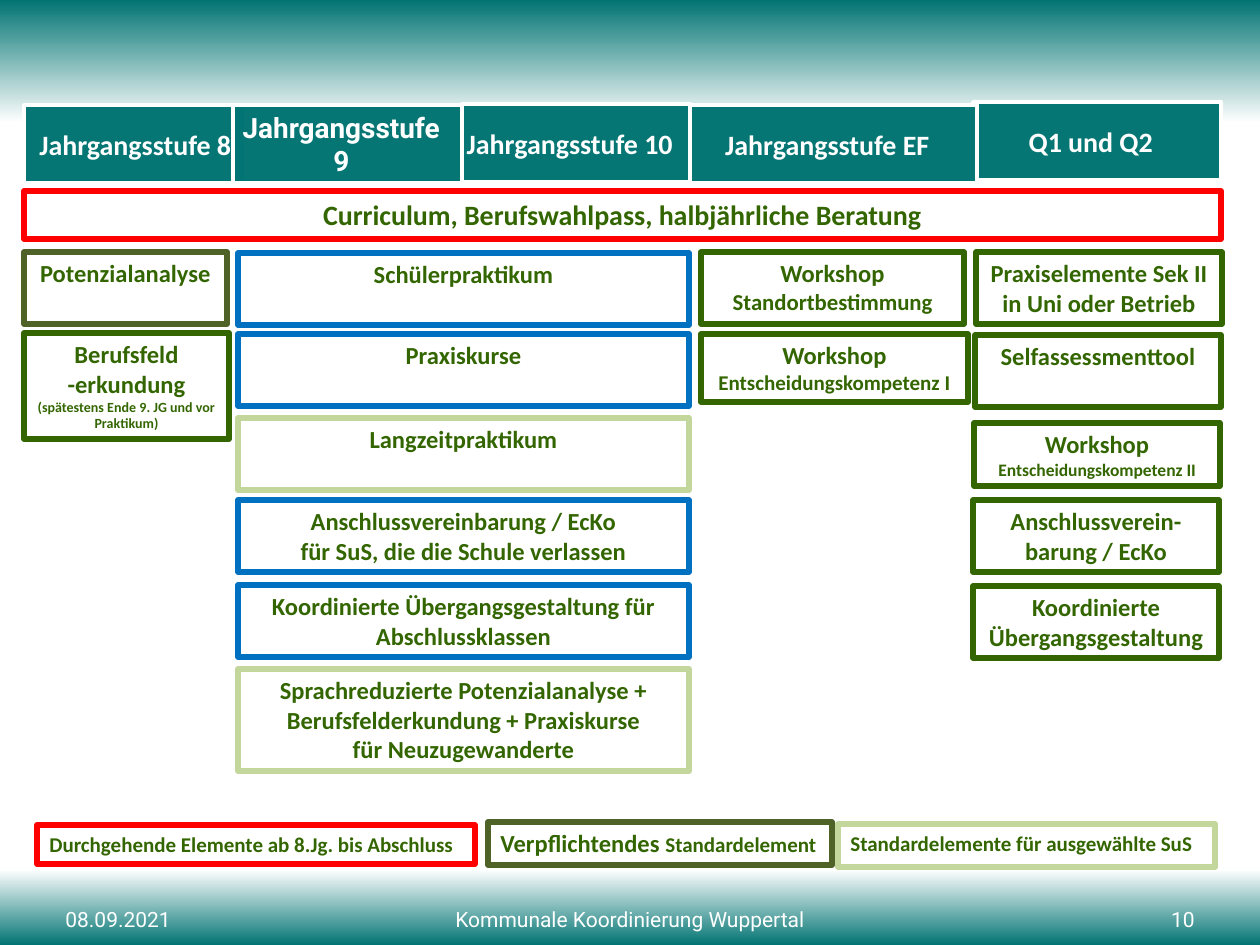
import pptx
import pptx.util
import pptx.dml.color
import pptx.enum.shapes
import pptx.enum.text
import pptx.oxml.ns
import lxml.etree

SCALE = 914400 / 126
TEAL, WHITE, GREEN = "027473", "FFFFFF", "336600"
OLIVE, BLUE, LIME, RED = "4F6228", "0070C0", "C3D69B", "FF0000"
ALIGN = pptx.enum.text.PP_ALIGN
MIDDLE = pptx.enum.text.MSO_ANCHOR.MIDDLE


def emu(px):
    return pptx.util.Emu(round(px * SCALE))


def color(text):
    return pptx.dml.color.RGBColor.from_string(text)


def child(node, tag, **attrs):
    return lxml.etree.SubElement(node, pptx.oxml.ns.qn(tag), attrs)


class Board:
    def __init__(self, slide):
        self.slide = slide
        self.font = "Calibri"
        self.ink = GREEN
        self.size = 14

    def back(self, stops):
        fill = self.slide.background.fill
        fill.gradient()
        fill.gradient_angle = 270
        root = self.slide.element
        steps = next(root.iter(pptx.oxml.ns.qn("a:gsLst")))
        for old in list(steps):
            steps.remove(old)
        for place, tone in stops:
            stop = child(steps, "a:gs", pos=str(place * 1000))
            child(stop, "a:srgbClr", val=tone)

    def label(self, frame, paras, align, ink, font, bold=True):
        frame.word_wrap = True
        for i, runs in enumerate(paras):
            para = frame.paragraphs[0] if i == 0 else frame.add_paragraph()
            para.alignment = align
            para.font.name = font
            para.font.bold = bold
            para.font.color.rgb = color(ink)
            if isinstance(runs, str):
                runs = [(runs, self.size)]
            if len(runs) == 1:
                para.font.size = pptx.util.Pt(runs[0][1])
            for text, size in runs:
                run = para.add_run()
                run.text = text
                if len(runs) > 1:
                    run.font.size = pptx.util.Pt(size)

    def rect(self, x, y, w, h, line, width):
        kind = pptx.enum.shapes.MSO_SHAPE.RECTANGLE
        shape = self.slide.shapes.add_shape(kind, emu(x), emu(y), emu(w), emu(h))
        shape.shadow.inherit = False
        shape.line.color.rgb = color(line)
        shape.line.width = pptx.util.Pt(width)
        return shape

    def head(self, x, y, w, text, font="Calibri", left=0):
        shape = self.rect(x, y, w, 78, WHITE, 2)
        shape.fill.solid()
        shape.fill.fore_color.rgb = color(TEAL)
        tone = shape.element.spPr.find(".//" + pptx.oxml.ns.qn("a:srgbClr"))
        child(tone, "a:alpha", val="98000")
        frame = shape.text_frame
        frame.margin_left = emu(left)
        frame.vertical_anchor = MIDDLE
        self.label(frame, [[(text, 16)]], ALIGN.CENTER, WHITE, font)

    def box(self, x, y, w, h, line, *paras, align=ALIGN.CENTER):
        shape = self.rect(x, y, w, h, line, 3.25)
        shape.fill.background()
        shape.text_frame.vertical_anchor = pptx.enum.text.MSO_ANCHOR.TOP
        self.label(shape.text_frame, paras, align, self.ink, self.font)

    def foot(self, x, w, text, align):
        area = self.slide.shapes.add_textbox(emu(x), emu(900), emu(w), emu(39))
        area.text_frame.vertical_anchor = MIDDLE
        self.label(area.text_frame, [[(text, 12)]], align, WHITE, "Roboto", False)


def main():
    deck = pptx.Presentation()
    deck.slide_width, deck.slide_height = emu(1260), emu(945)
    board = Board(deck.slides.add_slide(deck.slide_layouts[6]))
    board.back([(0, TEAL), (13, WHITE), (52, WHITE), (92, WHITE), (100, TEAL)])

    board.foot(53, 159, "08.09.2021", ALIGN.LEFT)
    board.foot(382, 496, "Kommunale Koordinierung Wuppertal", ALIGN.CENTER)
    board.foot(1048, 159, "10", ALIGN.RIGHT)

    board.head(24, 105, 222, "Jahrgangsstufe 8", left=13)
    board.head(233, 105, 229, "Jahrgangsstufe 9", font="Roboto")
    board.head(462, 104, 228, "Jahrgangsstufe 10")
    board.head(973, 102, 248, "Q1 und Q2")
    board.head(690, 105, 287, "Jahrgangsstufe EF")

    board.box(24, 191, 1197, 48, RED,
              [("Curriculum, Berufswahlpass, halbjährliche Beratung", 16)])

    board.box(24, 252, 203, 72, OLIVE, "Potenzialanalyse")
    board.box(24, 333, 205, 106, GREEN, "Berufsfeld", "-erkundung",
              [("(spätestens Ende 9. JG und vor Praktikum)", 8)])

    middle = [
        (253, 72, BLUE, ["Schülerpraktikum"]),
        (334, 72, BLUE, ["Praxiskurse"]),
        (418, 72, LIME, ["Langzeitpraktikum"]),
        (500, 72, BLUE, ["Anschlussvereinbarung / EcKo",
                         "für SuS, die die Schule verlassen"]),
        (585, 72, BLUE, ["Koordinierte Übergangsgestaltung für Abschlussklassen"]),
        (669, 102, LIME, ["Sprachreduzierte Potenzialanalyse +",
                          "Berufsfelderkundung + Praxiskurse",
                          "für Neuzugewanderte"]),
    ]
    for y, h, line, paras in middle:
        board.box(238, y, 451, h, line, *paras)

    shop = ("Workshop ", 14)
    board.box(701, 252, 263, 72, GREEN, [shop, ("Standortbestimmung", 13)])
    board.box(701, 334, 267, 68, GREEN, [shop, ("Entscheidungskompetenz I", 12)])

    right = [
        (976, 252, 72, "Praxiselemente Sek II in Uni oder Betrieb"),
        (975, 335, 72, "Selfassessmenttool"),
        (974, 423, 63, [shop, ("Entscheidungskompetenz II", 10)]),
        (973, 500, 72, "Anschlussverein-barung / EcKo"),
        (973, 586, 72, "Koordinierte Übergangsgestaltung"),
    ]
    for x, y, h, para in right:
        board.box(x, y, 246, h, GREEN, para)

    legend = [
        (838, 824, 377, 43, LIME, [("Standardelemente für ausgewählte SuS", 12)]),
        (488, 822, 344, 43, OLIVE, [("Verpflichtendes ", 14), ("Standardelement", 12)]),
        (37, 825, 438, 39, RED, [("Durchgehende Elemente ab 8.Jg. bis Abschluss", 12)]),
    ]
    for item in legend:
        board.box(*item, align=ALIGN.LEFT)

    deck.save("out.pptx")


if __name__ == "__main__":
    main()
